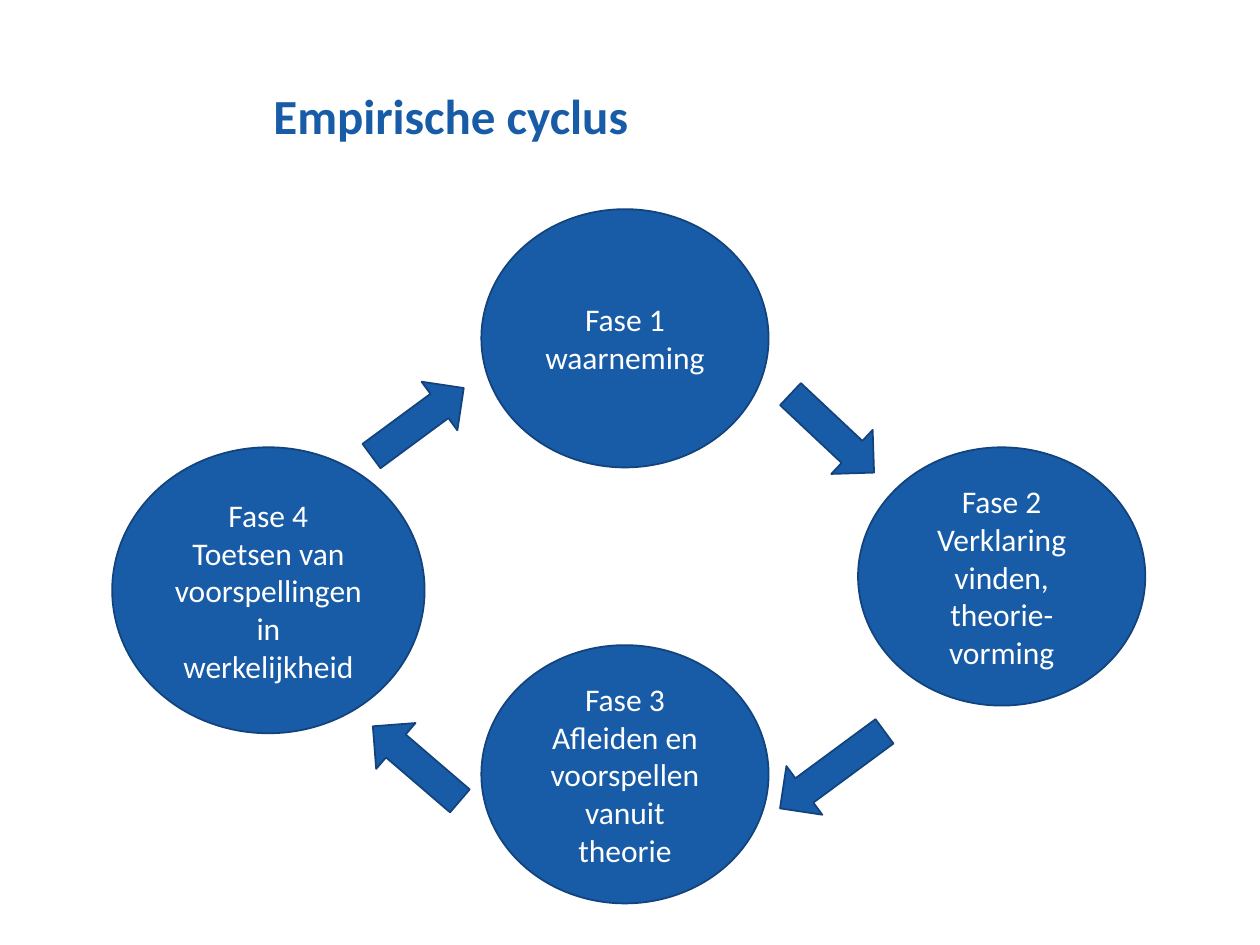
import dataclasses

import pptx
import pptx.dml.color
import pptx.enum.shapes
import pptx.enum.text
import pptx.util

SHAPE = pptx.enum.shapes.MSO_SHAPE
ALIGN = pptx.enum.text.PP_ALIGN
ANCHOR = pptx.enum.text.MSO_ANCHOR
TITLE_ONLY = 5


@dataclasses.dataclass(frozen=True)
class Theme:
    blue: str = "185BA7"
    outline: str = "12437C"
    white: str = "FFFFFF"
    font: str = "Calibri"
    title_size: int = 28
    phase_size: int = 18
    line_width: int = 1


def apply(target, values):
    for name, value in values.items():
        setattr(target, name, value)


def color(code):
    return pptx.dml.color.RGBColor.from_string(code)


class CyclePage:
    columns, rows = 100, 75

    def __init__(self, deck, theme):
        self.theme = theme
        self.column = deck.slide_width / self.columns
        self.row = deck.slide_height / self.rows
        self.page = deck.slides.add_slide(deck.slide_layouts[TITLE_ONLY])

    def area(self, left, top, width, height):
        return [round(left * self.column), round(top * self.row),
                round(width * self.column), round(height * self.row)]

    def add_span(self, para, text, size, code, **extra):
        span = para.add_run()
        span.text = text
        apply(span.font, {"name": self.theme.font, "size": pptx.util.Pt(size), **extra})
        span.font.color.rgb = color(code)

    def title(self, text, *place):
        box = self.page.shapes.title
        apply(box, dict(zip(("left", "top", "width", "height"), self.area(*place))))
        frame = box.text_frame
        apply(frame, {"margin_left": 0, "margin_top": 0, "margin_right": 0, "margin_bottom": 0,
                      "vertical_anchor": ANCHOR.MIDDLE, "word_wrap": True,
                      "auto_size": pptx.enum.text.MSO_AUTO_SIZE.NONE})
        para = frame.paragraphs[0]
        apply(para, {"alignment": ALIGN.LEFT, "line_spacing": 0.9})
        self.add_span(para, text, self.theme.title_size, self.theme.blue, bold=True)

    def shape(self, kind, *place):
        box = self.page.shapes.add_shape(kind, *self.area(*place))
        box.shadow.inherit = False
        box.fill.solid()
        box.fill.fore_color.rgb = color(self.theme.blue)
        box.line.color.rgb = color(self.theme.outline)
        box.line.width = pptx.util.Pt(self.theme.line_width)
        return box

    def phase(self, lines, *place):
        frame = self.shape(SHAPE.OVAL, *place).text_frame
        apply(frame, {"word_wrap": True, "vertical_anchor": ANCHOR.MIDDLE})
        for index, line in enumerate(lines):
            para = frame.add_paragraph() if index else frame.paragraphs[0]
            para.alignment = ALIGN.CENTER
            self.add_span(para, line, self.theme.phase_size, self.theme.white)

    def arrow(self, angle, *place):
        self.shape(SHAPE.RIGHT_ARROW, *place).rotation = angle


def main():
    deck = pptx.Presentation()
    apply(deck, {"slide_width": pptx.util.Inches(10), "slide_height": pptx.util.Inches(7.5)})
    cycle = CyclePage(deck, Theme())
    cycle.title("Empirische cyclus", 21.7, 7.5, 70.4, 3.8)

    normal, large = (22.8, 20.5), (24.8, 22.7)
    phases = [
        ("waarneming", 38.2, 16.6, normal),
        ("Verklaring vinden, theorie-vorming", 68.1, 35.5, normal),
        ("Afleiden en voorspellen vanuit theorie", 38.2, 51.2, normal),
        ("Toetsen van voorspellingen in werkelijkheid", 8.9, 35.5, large),
    ]
    for number, (text, left, top, size) in enumerate(phases, 1):
        cycle.phase((f"Fase {number}", text), left, top, *size)

    arrows = [
        (323.6, 28.6, 31.1, 9.1),
        (220.6, 28.5, 58.2, 9.1),
        (43.2, 61.5, 32, 9.1),
        (143.6, 60.9, 58.7, 10.3),
    ]
    for angle, left, top, length in arrows:
        cycle.arrow(angle, left, top, length, 4.8)

    deck.save("out.pptx")


if __name__ == "__main__":
    main()
